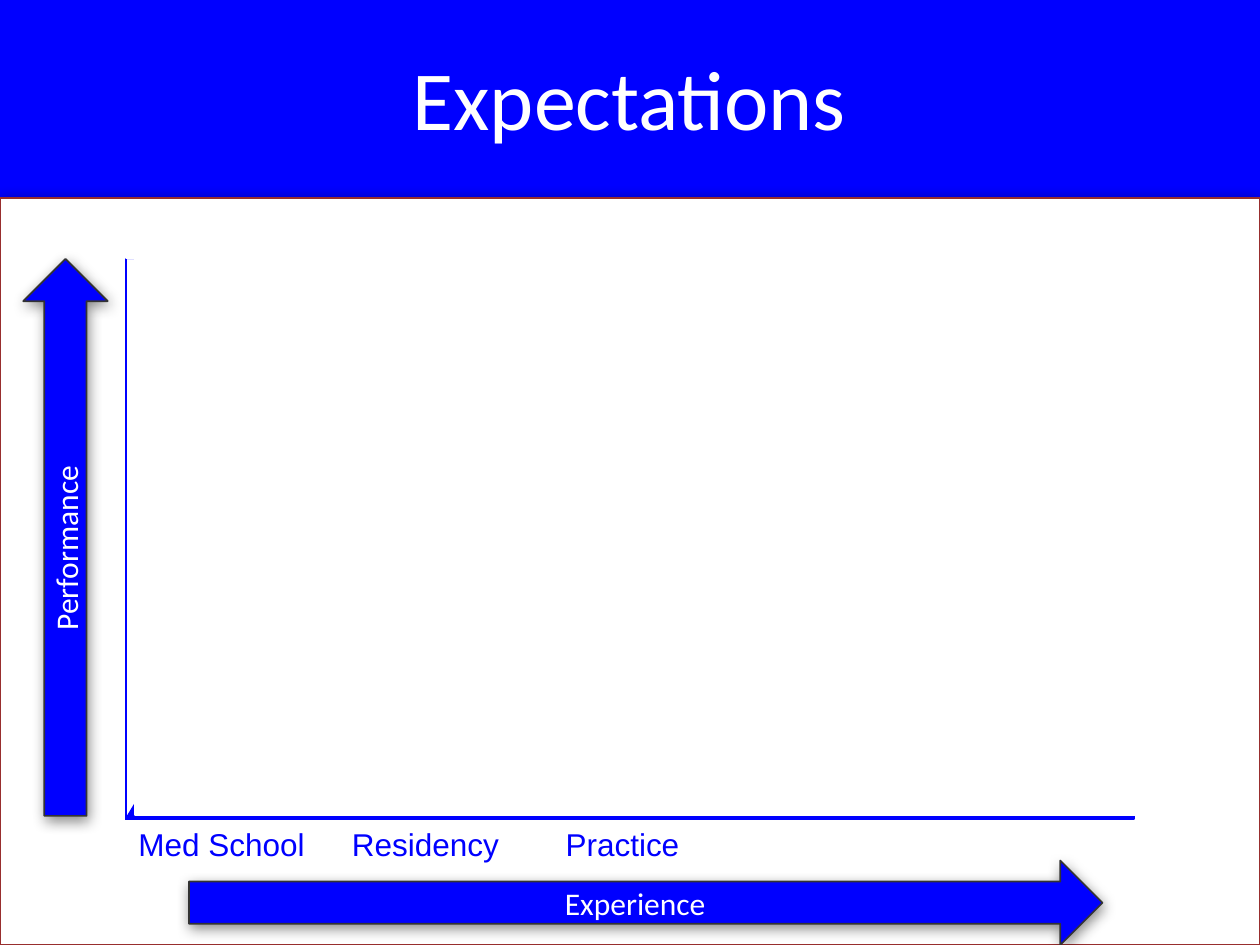
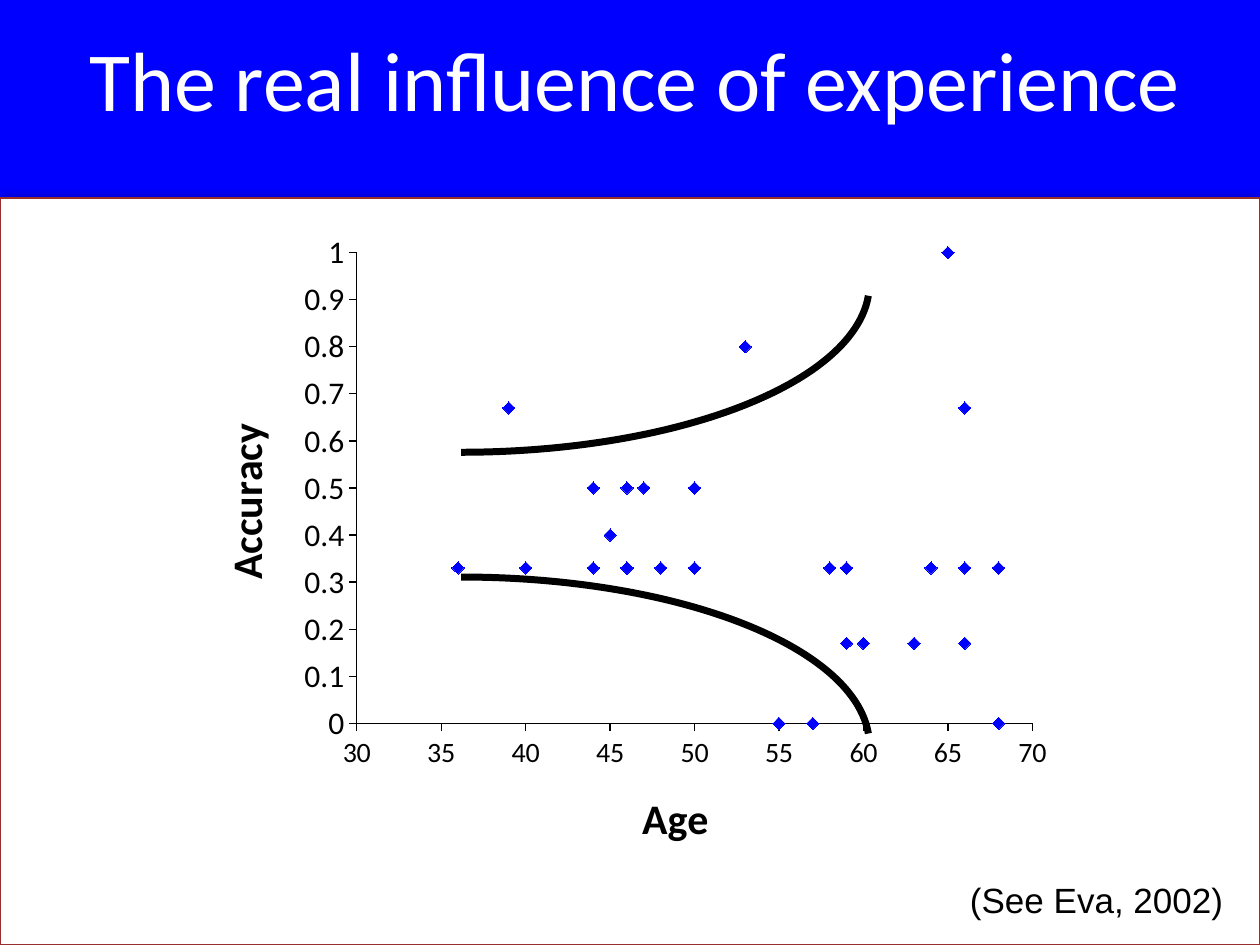
"""Build two slides on expectations and the real influence of experience."""
from dataclasses import dataclass

from lxml import etree
from pptx import Presentation
from pptx.chart.data import XyChartData
from pptx.dml.color import RGBColor
from pptx.enum.chart import XL_CHART_TYPE, XL_MARKER_STYLE, XL_TICK_MARK
from pptx.enum.shapes import MSO_SHAPE
from pptx.enum.text import MSO_ANCHOR, MSO_AUTO_SIZE, PP_ALIGN
from pptx.oxml import parse_xml
from pptx.oxml.ns import nsdecls, qn
from pptx.util import Inches, Pt

RECTANGLE = MSO_SHAPE.RECTANGLE
TRIANGLE = MSO_SHAPE.RIGHT_TRIANGLE
PARALLELOGRAM = MSO_SHAPE.PARALLELOGRAM
ARROW = MSO_SHAPE.RIGHT_ARROW
ARC = MSO_SHAPE.ARC
SCATTER = XL_CHART_TYPE.XY_SCATTER
DIAMOND = XL_MARKER_STYLE.DIAMOND
TICK_OUT = XL_TICK_MARK.OUTSIDE
TICK_NONE = XL_TICK_MARK.NONE
CENTER = PP_ALIGN.CENTER
LEFT = PP_ALIGN.LEFT
MIDDLE = MSO_ANCHOR.MIDDLE
TOP = MSO_ANCHOR.TOP
GROW = MSO_AUTO_SIZE.SHAPE_TO_FIT_TEXT
NO_AUTOSIZE = MSO_AUTO_SIZE.NONE

COLORS = {"blue": "0000FF", "white": "FFFFFF", "black": "000000",
          "panel_edge": "982E2E", "arrow_edge": "333333"}
HEADING_FONT, LABEL_FONT = "Calibri", "Arial"
WIDTH, HEIGHT = Inches(10), Inches(7.5)
COLUMNS, ROWS = 40, 30

STAGES = [("Med School", 6.36), ("Residency", 5.52), ("Practice", 4.44)]
ACCURACY_BY_AGE = [
    (65, 1), (39, 0.67), (53, 0.8), (64, 0.33), (68, 0), (40, 0.33), (47, 0.5),
    (68, 0.33), (55, 0), (60, 0.17), (66, 0.67), (44, 0.33), (46, 0.33),
    (66, 0.17), (59, 0.33), (63, 0.17), (45, 0.4), (46, 0.5), (66, 0.33),
    (48, 0.33), (44, 0.5), (57, 0), (58, 0.33), (59, 0.17), (46, 0.33),
    (36, 0.33), (50, 0.5), (50, 0.33)]


@dataclass
class Box:
    """A region measured in grid columns and rows."""
    col: float
    row: float
    cols: float
    rows: float

    def inset(self, col, row, cols, rows):
        """Return a region placed from this one's top left corner."""
        return Box(self.col + col, self.row + row, cols, rows)

    def emu(self):
        """Return left, top, width and height in slide units."""
        across, down = WIDTH / COLUMNS, HEIGHT / ROWS
        return (round(self.col * across), round(self.row * down),
                round(self.cols * across), round(self.rows * down))


def rgb(name):
    """Look up a named colour."""
    return RGBColor.from_string(COLORS[name])


def style_font(font, size, color, face=HEADING_FONT, bold=False):
    """Give a font its face, size, weight and colour."""
    font.name, font.size, font.bold = face, Pt(size), bold
    font.color.rgb = rgb(color)


def write(shape, text, size, color, face=HEADING_FONT, align=CENTER, anchor=MIDDLE):
    """Set and format the text of a shape."""
    frame = shape.text_frame
    frame.text = text
    frame.vertical_anchor = anchor
    paragraph = frame.paragraphs[0]
    paragraph.alignment = align
    style_font(paragraph.runs[0].font, size, color, face)


def add_label(slide, box, text, size, color):
    """Add a one-line label that grows with its text."""
    label = slide.shapes.add_textbox(*box.emu())
    write(label, text, size, color, LABEL_FONT, LEFT, TOP)
    label.text_frame.word_wrap = False
    label.text_frame.auto_size = GROW


def add_figure(slide, kind, box, fill, edge, weight=1, flip=None, rotation=0):
    """Add a flat preset shape, unfilled when fill is None."""
    figure = slide.shapes.add_shape(kind, *box.emu())
    figure.shadow.inherit = False
    if fill:
        figure.fill.solid()
        figure.fill.fore_color.rgb = rgb(fill)
    else:
        figure.fill.background()
    figure.line.color.rgb = rgb(edge)
    figure.line.width = Pt(weight)
    figure.rotation = rotation
    if flip:
        figure.element.spPr.find(qn("a:xfrm")).set(flip, "1")
    return figure


def add_shadow(figure):
    """Give a figure the soft shadow of the theme."""
    effects = figure.element.spPr.find(qn("a:effectLst"))
    shadow = etree.SubElement(effects, qn("a:outerShdw"), blurRad=str(Pt(8)),
                              dist=str(Pt(2)), dir="4800000", rotWithShape="0")
    color = etree.SubElement(shadow, qn("a:srgbClr"), val=COLORS["black"])
    etree.SubElement(color, qn("a:alpha"), val="45000")


def add_titled_slide(prs, title, title_box):
    """Add a blue slide with a title and the white panel."""
    slide = prs.slides.add_slide(prs.slide_layouts[5])
    slide.background.fill.solid()
    slide.background.fill.fore_color.rgb = rgb("blue")
    heading = slide.shapes.title
    heading.left, heading.top, heading.width, heading.height = title_box.emu()
    write(heading, title, 48, "white")
    heading.text_frame.auto_size = NO_AUTOSIZE
    add_shadow(add_figure(slide, RECTANGLE, Box(0, 6.28, COLUMNS, 23.72),
                          "white", "panel_edge"))
    return slide


def add_axis_arrow(slide, box, text, rotation=0):
    """Add a labelled block arrow along an axis."""
    arrow = add_figure(slide, ARROW, box, "blue", "arrow_edge", rotation=rotation)
    add_shadow(arrow)
    write(arrow, text, 18, "white")


def draw_growth(slide, plot):
    """Draw the growth wedge, its axes and the covers of the stages."""
    wedge = plot.inset(0, 0.2, plot.cols, plot.rows - 0.2)
    add_figure(slide, TRIANGLE, wedge, "blue", "blue", flip="flipH")
    add_figure(slide, TRIANGLE, wedge, "white", "blue", flip="flipH", rotation=180)
    add_axis_arrow(slide, plot.inset(2, 19.32, 29, 2.68), "Experience")
    add_axis_arrow(slide, plot.inset(-10.76, 7.72, 17.68, 2.68), "Performance", 270)
    add_figure(slide, RECTANGLE, plot.inset(0, 0, plot.cols, 0.2), "white", "white")
    for index, (stage, cols) in enumerate(STAGES):
        add_label(slide, plot.inset(6.78 * index, plot.rows, cols, 1.6),
                  stage, 18, "blue")
    slope = add_figure(slide, PARALLELOGRAM, plot.inset(0, 0.32, plot.cols, 17.68),
                       "blue", "blue")
    slope.adjustments[0] = 0.6
    for index in reversed(range(len(STAGES))):
        add_figure(slide, RECTANGLE, plot.inset(0.28 + 6.36 * index, 0, 20.08, 17.88),
                   "white", "white")


def format_axis(axis, title, size, low, high, step):
    """Set an axis's scale, title and look."""
    axis.minimum_scale, axis.maximum_scale, axis.major_unit = low, high, step
    axis.has_major_gridlines = False
    axis.major_tick_mark, axis.minor_tick_mark = TICK_OUT, TICK_NONE
    axis.format.line.color.rgb = rgb("black")
    axis.format.line.width = Pt(0.75)
    style_font(axis.tick_labels.font, size, "black")
    axis.tick_labels.number_format = "General"
    axis.tick_labels.number_format_is_linked = False
    axis.axis_title.text_frame.text = title
    run = axis.axis_title.text_frame.paragraphs[0].runs[0]
    style_font(run.font, 24, "black", bold=True)


def set_plot_layout(chart, **shares):
    """Fix the inner plot area as shares of the chart."""
    area = chart.element.find(".//" + qn("c:plotArea"))
    for layout in area.findall(qn("c:layout")):
        area.remove(layout)
    settings = {"layoutTarget": "inner", "xMode": "edge", "yMode": "edge", **shares}
    items = "".join(f'<c:{key} val="{value}"/>' for key, value in settings.items())
    area.insert(0, parse_xml(f'<c:layout {nsdecls("c")}><c:manualLayout>{items}'
                             '</c:manualLayout></c:layout>'))


def draw_accuracy_chart(slide, box):
    """Plot accuracy against age."""
    data = XyChartData()
    points = data.add_series("Series 1")
    for age, accuracy in ACCURACY_BY_AGE:
        points.add_data_point(age, accuracy)
    chart = slide.shapes.add_chart(SCATTER, *box.emu(), data).chart
    chart.has_legend = chart.has_title = False
    style_font(chart.font, 10, "white")
    format_axis(chart.category_axis, "Age", 16, 30, 70, 5)
    format_axis(chart.value_axis, "Accuracy", 18, 0, 1, 0.1)
    chart.plots[0].vary_by_categories = False
    series = chart.plots[0].series[0]
    series.smooth = False
    series.format.line.fill.background()
    marker = series.marker
    marker.style, marker.size = DIAMOND, 7
    marker.format.fill.solid()
    marker.format.fill.fore_color.rgb = rgb("blue")
    marker.format.line.color.rgb = rgb("blue")
    set_plot_layout(chart, x=0.21, y=0.04, w=0.75, h=0.73)


def draw_spread(slide, chart_box):
    """Draw the two curves that part as age rises."""
    for row, flip in ((11.12, None), (-3.52, "flipV")):
        curve = add_figure(slide, ARC, chart_box.inset(-3.64, row, 25.92, 10.68),
                           None, "black", 4, flip)
        curve.adjustments[0], curve.adjustments[1] = 162, 215.01


def build_expectations(prs):
    """Build the slide on expected growth."""
    slide = add_titled_slide(prs, "Expectations", Box(3.4, 0.28, 33.16, 5.6))
    draw_growth(slide, Box(4, 8, 32, 18))


def build_influence(prs):
    """Build the slide on measured accuracy."""
    slide = add_titled_slide(prs, "The real influence of experience",
                             Box(1, -0.32, 38.32, 5.6))
    chart_box = Box(5.32, 7.2, 28.6, 20.48)
    draw_accuracy_chart(slide, chart_box)
    add_label(slide, Box(30.4, 27.68, 8.92, 1.76), "(See Eva, 2002)", 20, "black")
    draw_spread(slide, chart_box)


def main():
    """Build and save the presentation."""
    prs = Presentation()
    prs.slide_width, prs.slide_height = WIDTH, HEIGHT
    build_expectations(prs)
    build_influence(prs)
    prs.save("out.pptx")


if __name__ == "__main__":
    main()
